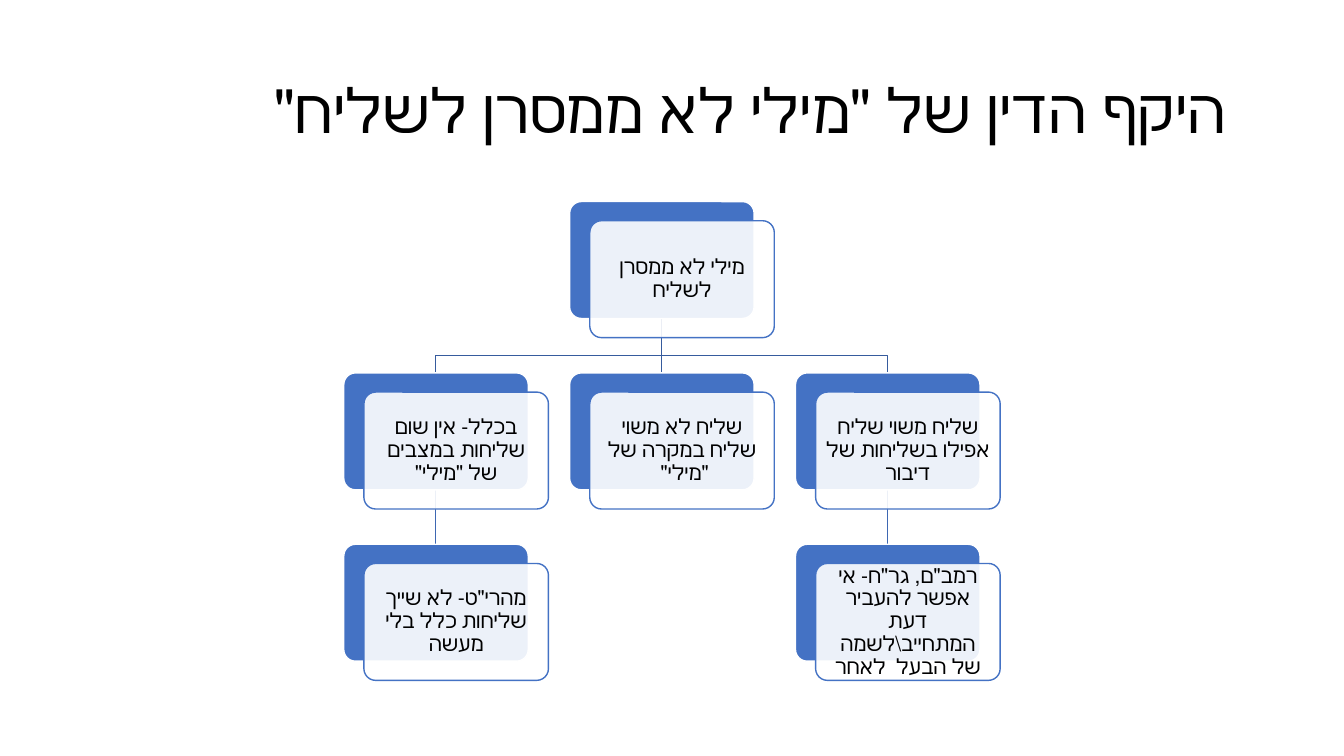
from lxml import etree
from pptx import Presentation
from pptx.dml.color import RGBColor
from pptx.enum.shapes import MSO_CONNECTOR, MSO_SHAPE
from pptx.enum.text import MSO_ANCHOR, PP_ALIGN
from pptx.oxml.ns import qn
from pptx.util import Pt

ROUNDED = MSO_SHAPE.ROUNDED_RECTANGLE
STRAIGHT = MSO_CONNECTOR.STRAIGHT
MIDDLE = MSO_ANCHOR.MIDDLE
CENTER, RIGHT = PP_ALIGN.CENTER, PP_ALIGN.RIGHT

PX = 9144
FONT = "Calibri"
BLUE, WHITE, BLACK = "4472C4", "FFFFFF", "000000"
UPPER_LINK, LOWER_LINK = "365B9D", "3E67B2"

CARD_W, CARD_H = 183, 116
COLUMN_STEP, ROW_STEP = 224, 170
FRONT_DX, FRONT_DY = 20, 19
BEND_DY = 37

TITLE = ' היקף הדין של "מילי לא ממסרן לשליח" '
OPINIONS = {
    (1, 0): "מילי לא ממסרן לשליח",
    (0, 1): 'בכלל- אין שום שליחות במצבים של "מילי"',
    (0, 2): 'מהרי"ט- לא שייך שליחות כלל בלי מעשה',
    (1, 1): 'שליח לא משוי שליח במקרה של "מילי" ',
    (2, 1): "שליח משוי שליח אפילו בשליחות של דיבור",
    (2, 2): 'רמב"ם, גר"ח- אי אפשר להעביר דעת המתחייב\\לשמה של הבעל  לאחר',
}
LINKS = [
    ((2, 1), (2, 2), LOWER_LINK),
    ((1, 0), (2, 1), UPPER_LINK),
    ((1, 0), (1, 1), UPPER_LINK),
    ((0, 1), (0, 2), LOWER_LINK),
    ((1, 0), (0, 1), UPPER_LINK),
]


def px(*lengths):
    """Turn px lengths into EMU."""
    return [length * PX for length in lengths]


def rgb(code):
    """Return the colour for a hex string."""
    return RGBColor.from_string(code)


def write_hebrew(frame, words, size, align, inset_x, inset_y):
    """Write one right-to-left paragraph into a text frame."""
    frame.word_wrap = True
    frame.vertical_anchor = MIDDLE
    frame.margin_left = frame.margin_right = inset_x * PX
    frame.margin_top = frame.margin_bottom = inset_y * PX
    paragraph = frame.paragraphs[0]
    paragraph.alignment = align
    paragraph.line_spacing = 0.9
    paragraph._p.get_or_add_pPr().set("rtl", "1")
    run = paragraph.add_run()
    run.text = words
    run.font.size = Pt(size)
    run.font.name = FONT
    run.font.color.rgb = rgb(BLACK)


def add_title(slide, left, top, width, height):
    """Place the slide title in the given box."""
    title = slide.shapes.add_textbox(*px(left, top, width, height))
    write_hebrew(title.text_frame, TITLE, 44, RIGHT, 10, 5)


def add_panel(slide, left, top, fill, line):
    """Draw one rounded panel of a card."""
    panel = slide.shapes.add_shape(ROUNDED, *px(left, top, CARD_W, CARD_H))
    panel.adjustments[0] = 0.1
    panel.shadow.inherit = False
    panel.fill.solid()
    panel.fill.fore_color.rgb = rgb(fill)
    panel.line.color.rgb = rgb(line)
    panel.line.width = Pt(1)
    return panel


def add_card(slide, left, top, words):
    """Draw a blue panel with an overlapping translucent text panel."""
    add_panel(slide, left, top, BLUE, WHITE)
    front = add_panel(slide, left + FRONT_DX, top + FRONT_DY, WHITE, BLUE)
    white = front.fill._xPr.find(qn("a:solidFill")).find(qn("a:srgbClr"))
    etree.SubElement(white, qn("a:alpha"), val="90000")
    write_hebrew(front.text_frame, words, 15, CENTER, 6, 6)


def add_link(slide, start, end, color):
    """Join two points, bending when they lie in different columns."""
    if start[0] == end[0]:
        link = slide.shapes.add_connector(STRAIGHT, *px(*start, *end))
        etree.SubElement(link._element.spPr, qn("a:effectLst"))
    else:
        bend_y = start[1] + BEND_DY
        builder = slide.shapes.build_freeform(*start, scale=PX)
        builder.add_line_segments(
            [(start[0], bend_y), (end[0], bend_y), end], close=False)
        link = builder.convert_to_shape()
        link.shadow.inherit = False
        link.fill.background()
    link.line.color.rgb = rgb(color)
    link.line.width = Pt(1)


def add_hierarchy(slide, left, top):
    """Lay out the tree of opinions from its top left corner."""
    def corner(cell):
        """Return the top left of a card's blue panel."""
        return left + cell[0] * COLUMN_STEP, top + cell[1] * ROW_STEP

    for parent, child, color in LINKS:
        parent_x, parent_y = corner(parent)
        child_x, child_y = corner(child)
        add_link(slide, (parent_x + CARD_W // 2, parent_y + CARD_H),
                 (child_x + CARD_W // 2, child_y), color)
    for cell, words in OPINIONS.items():
        add_card(slide, *corner(cell), words)


def main():
    """Build and save the presentation."""
    deck = Presentation()
    deck.slide_width, deck.slide_height = px(1333, 750)
    slide = deck.slides.add_slide(deck.slide_layouts[6])
    add_title(slide, 92, 40, 1150, 145)
    add_hierarchy(slide, 341, 200)
    deck.save("out.pptx")


if __name__ == "__main__":
    main()
